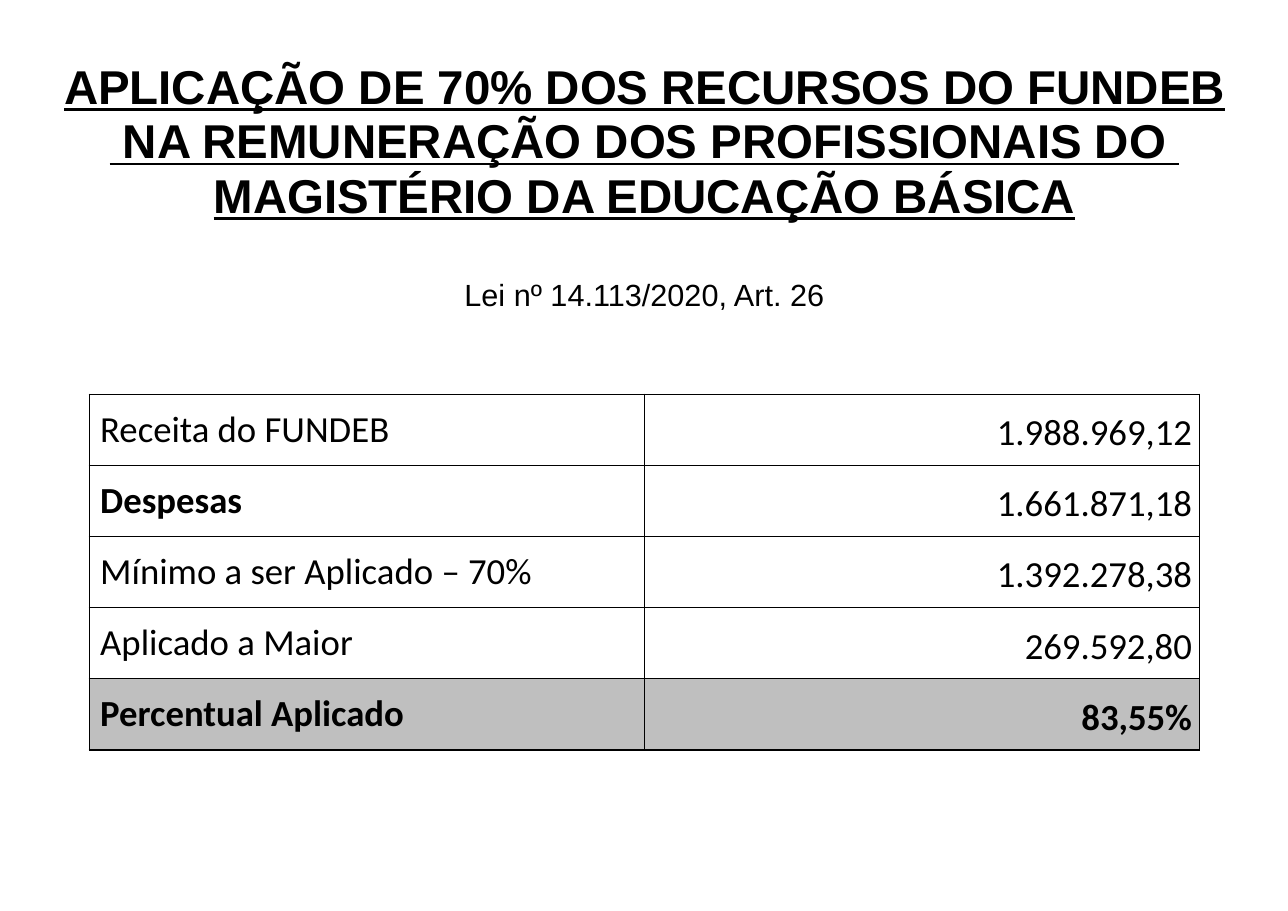
from lxml.etree import SubElement
from pptx import Presentation
from pptx.dml.color import RGBColor
from pptx.enum.text import MSO_ANCHOR as Anchor, MSO_AUTO_SIZE as AutoSize, PP_ALIGN as Align
from pptx.oxml.ns import qn
from pptx.util import Inches, Pt

HEADING = ("APLICAÇÃO DE 70% DOS RECURSOS DO FUNDEB\v"
           " NA REMUNERAÇÃO DOS PROFISSIONAIS DO \v"
           "MAGISTÉRIO DA EDUCAÇÃO BÁSICA")
LAW = "Lei nº 14.113/2020, Art. 26"
ROWS = [
    ("Receita do FUNDEB", "1.988.969,12"),
    ("Despesas", "1.661.871,18"),
    ("Mínimo a ser Aplicado – 70%", "1.392.278,38"),
    ("Aplicado a Maior", "269.592,80"),
    ("Percentual Aplicado", "83,55%"),
]
BOLD_CELLS = {(1, 0), (4, 0), (4, 1)}


def color(value):
    return RGBColor.from_string(value)


class FundebPage:
    ink = "000000"
    paper = "FFFFFF"
    highlight = "BFBFBF"
    heading_font = "Arial"
    table_font = "Calibri"

    def __init__(self, deck):
        self.page = deck.slides.add_slide(deck.slide_layouts[5])
        self.page.background.fill.solid()
        self.page.background.fill.fore_color.rgb = color(self.paper)

    def style(self, para, font, size, bold, align, spacing):
        para.alignment = align
        para.line_spacing = spacing
        para.font.name = font
        para.font.size = Pt(size)
        para.font.bold = bold
        para.font.color.rgb = color(self.ink)

    def title(self, heading, law):
        box = self.page.shapes.title
        box.left, box.top = Inches(0.46), Inches(0.51)
        box.width, box.height = Inches(10.78), Inches(2.36)
        frame = box.text_frame
        frame.word_wrap = True
        frame.auto_size = AutoSize.NONE
        frame.vertical_anchor = Anchor.TOP
        frame.margin_left = frame.margin_right = frame.margin_bottom = 0
        frame.margin_top = Inches(0.04)
        for para, text, size, bold, before in (
            (frame.paragraphs[0], heading, 31, True, 2.6),
            (frame.add_paragraph(), law, 20, False, 35),
        ):
            para.text = text
            self.style(para, self.heading_font, size, bold, Align.CENTER, 0.96)
            para.font.underline = bold
            para.space_before = Pt(before)

    def border(self, cell):
        properties = cell._tc.get_or_add_tcPr()
        for side in ("a:lnL", "a:lnR", "a:lnT", "a:lnB"):
            line = SubElement(properties, qn(side), w=str(Pt(1)))
            fill = SubElement(line, qn("a:solidFill"))
            SubElement(fill, qn("a:srgbClr"), val=self.ink)

    def table(self, rows, bold_cells):
        table = self.page.shapes.add_table(
            len(rows), 2, Inches(0.81), Inches(3.58), Inches(10.08), Inches(3.23)).table
        table.first_row = table.horz_banding = False
        for row, texts in enumerate(rows):
            fill = self.highlight if row == len(rows) - 1 else self.paper
            for column, text in enumerate(texts):
                cell = table.cell(row, column)
                self.border(cell)
                cell.fill.solid()
                cell.fill.fore_color.rgb = color(fill)
                cell.vertical_anchor = Anchor.MIDDLE
                cell.text = text
                align, spacing = Align.LEFT, 1.0
                if column == 1:
                    align, spacing = Align.RIGHT, 1.15
                    cell.margin_left = cell.margin_right = Inches(0.07)
                    cell.margin_top = cell.margin_bottom = 0
                self.style(cell.text_frame.paragraphs[0], self.table_font, 24,
                           (row, column) in bold_cells, align, spacing)


def main():
    deck = Presentation()
    deck.slide_width, deck.slide_height = Inches(11.69), Inches(8.27)
    page = FundebPage(deck)
    page.title(HEADING, LAW)
    page.table(ROWS, BOLD_CELLS)
    deck.save("out.pptx")


if __name__ == "__main__":
    main()
